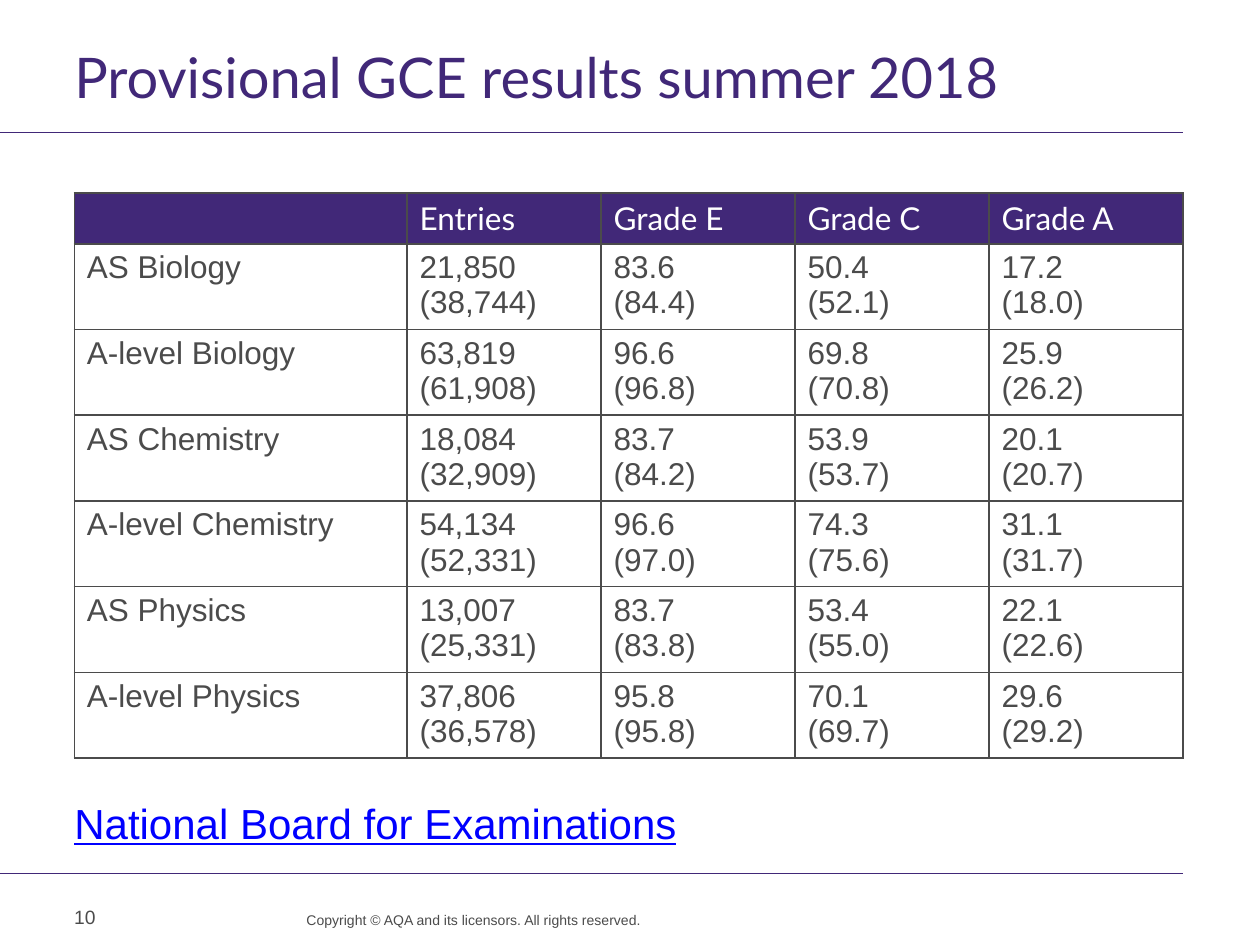
from pptx import Presentation
from pptx.dml.color import RGBColor
from pptx.enum.shapes import MSO_CONNECTOR
from pptx.enum.text import MSO_ANCHOR, PP_ALIGN
from pptx.oxml import parse_xml
from pptx.oxml.ns import nsdecls
from pptx.util import Inches, Pt

HUE = {"plum": "412878", "gray": "4B4B4B", "white": "FFFFFF", "link": "0000FF"}
WIDE, HIGH = Inches(10), Inches(7.5)
LEFT, SPAN = 0.059 * WIDE, 0.88 * WIDE

deck = Presentation()
deck.slide_width, deck.slide_height = WIDE, HIGH
slide = deck.slides.add_slide(deck.slide_layouts[6])


def write(para, text, hue, **form):
    para.text = text
    for run in para.runs:
        run.font.color.rgb = RGBColor.from_string(HUE[hue])
        for key, val in form.items():
            setattr(run.font, key, val)


def place(left, top, wide, high, text, hue, frame, lines, **form):
    box = slide.shapes.add_textbox(*map(int, (left, top, wide, high))).text_frame
    para = box.paragraphs[0]
    for part, vals in ((box, frame), (para, lines)):
        for key, val in vals.items():
            setattr(part, key, val)
    write(para, text, hue, **form)


# Rules under the title and above the footer
for share in (0.14, 0.924):
    y = int(share * HIGH)
    rule = slide.shapes.add_connector(MSO_CONNECTOR.STRAIGHT, 0, y, int(LEFT + SPAN), y)
    rule.line.color.rgb = RGBColor.from_string(HUE["plum"])
    rule.line.width = Pt(0.6)
    rule._element.spPr.append(parse_xml(f"<a:effectLst {nsdecls('a')}/>"))

# Title, link and footer
flush = {"margin_left": 0, "margin_top": 0, "margin_right": 0, "margin_bottom": 0,
         "word_wrap": True}
place(LEFT, 0.064 * HIGH, SPAN, 0.063 * HIGH, "Provisional GCE results summer 2018",
      "plum", flush, {"line_spacing": Pt(28)}, name="Lato", size=Pt(32))
place(LEFT, 0.844 * HIGH, SPAN, 0.05 * HIGH, "National Board for Examinations",
      "link", flush, {}, name="Arial", size=Pt(24), underline=True)
place(0.216 * WIDE, 0.964 * HIGH, 0.293 * WIDE, 0.035 * HIGH,
      "Copyright © AQA and its licensors. All rights reserved.", "gray", flush,
      {"line_spacing": Pt(10), "alignment": PP_ALIGN.RIGHT}, name="Arial", size=Pt(8))
place(0.049 * WIDE, 0.944 * HIGH, 0.076 * WIDE, 0.053 * HIGH, "10", "gray",
      {"vertical_anchor": MSO_ANCHOR.MIDDLE, "word_wrap": True}, {},
      name="Arial", size=Pt(11))

# Results: this year with last year in brackets
rows = [
    ["", "Entries", "Grade E", "Grade C", "Grade A"],
    ["AS Biology", "21,850 (38,744)", "83.6 (84.4)", "50.4 (52.1)", "17.2 (18.0)"],
    ["A-level Biology", "63,819 (61,908)", "96.6 (96.8)", "69.8 (70.8)", "25.9 (26.2)"],
    ["AS Chemistry", "18,084 (32,909)", "83.7 (84.2)", "53.9 (53.7)", "20.1 (20.7)"],
    ["A-level Chemistry", "54,134 (52,331)", "96.6 (97.0)", "74.3 (75.6)", "31.1 (31.7)"],
    ["AS Physics", "13,007 (25,331)", "83.7 (83.8)", "53.4 (55.0)", "22.1 (22.6)"],
    ["A-level Physics", "37,806 (36,578)", "95.8 (95.8)", "70.1 (69.7)", "29.6 (29.2)"],
]
HEAD, BODY = 0.054 * HIGH, 0.088 * HIGH
grid = slide.shapes.add_table(len(rows), len(rows[0]), int(LEFT), int(0.204 * HIGH),
                              int(SPAN), int(HEAD + 6 * BODY)).table
grid.horz_banding = False
for num, col in enumerate(grid.columns):
    col.width = int(SPAN * (0.175 if num else 0.3))

for num, row in enumerate(rows):
    grid.rows[num].height = int(BODY if num else HEAD)
    for pos, text in enumerate(row):
        cell = grid.cell(num, pos)
        cell.margin_bottom = Inches(0.03 if num else 0.05)
        if num and pos:
            text = text.replace(" ", "\n")
        write(cell.text_frame.paragraphs[0], text, "gray" if num else "white",
              name="Arial" if num else "Lato", size=Pt(18))
        # Borders come before the fill in the cell's XML
        props = cell._tc.get_or_add_tcPr()
        for side in ("lnL", "lnR", "lnT", "lnB"):
            props.append(parse_xml(
                f'<a:{side} {nsdecls("a")} w="{Pt(1)}"><a:solidFill>'
                f'<a:srgbClr val="{HUE["gray"]}"/></a:solidFill></a:{side}>'))
        cell.fill.solid()
        cell.fill.fore_color.rgb = RGBColor.from_string(HUE["white" if num else "plum"])

deck.save("out.pptx")
